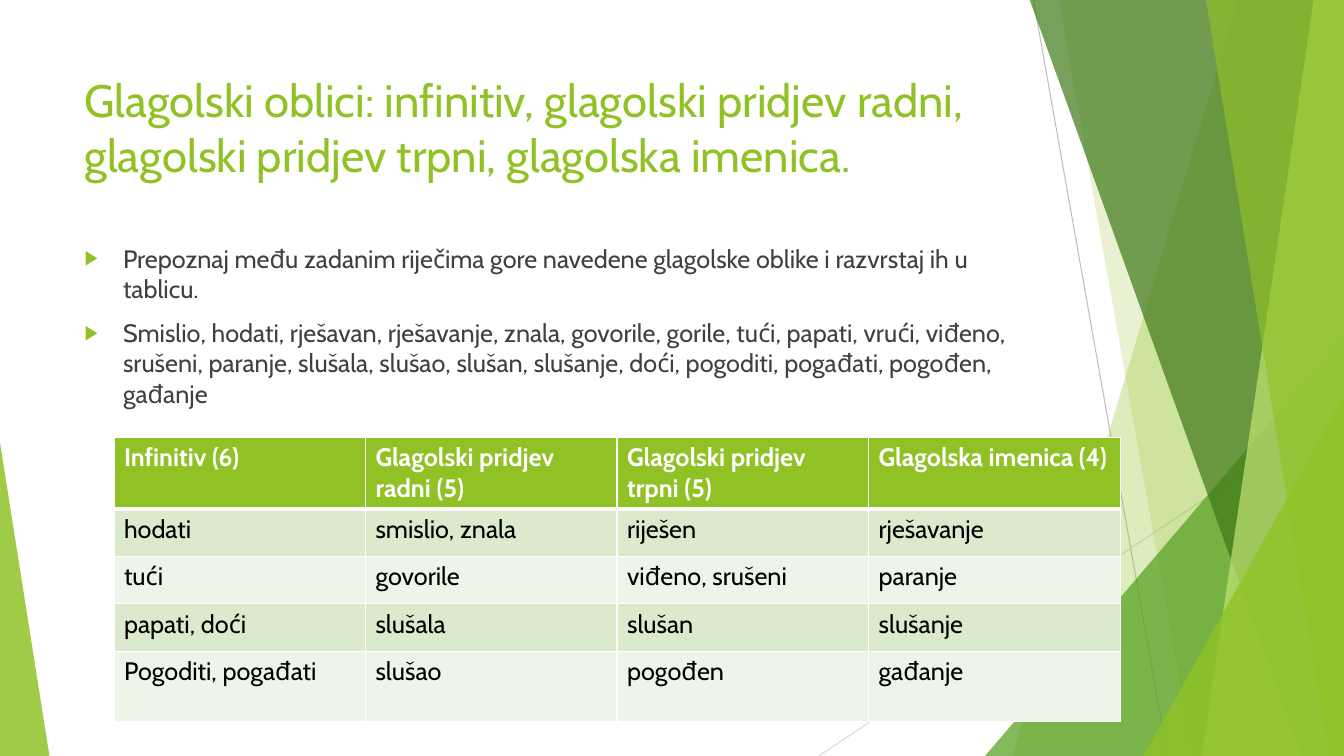
"""Build a Croatian grammar slide that sorts verb forms into a table."""
from lxml import etree
from pptx import Presentation
from pptx import util as u
from pptx.dml.color import RGBColor
from pptx.enum import shapes, text
from pptx.oxml import ns

GREEN = RGBColor(0x90, 0xC2, 0x26)
MID_GREEN = RGBColor(0x54, 0xA0, 0x21)
DARK_GREEN = RGBColor(0x3F, 0x78, 0x19)
LIME = RGBColor(0xC0, 0xE4, 0x74)
BAND_DARK = RGBColor(0xDB, 0xE9, 0xCD)
BAND_LIGHT = RGBColor(0xEE, 0xF4, 0xE8)
BODY_GREY = RGBColor(0x40, 0x40, 0x40)
LINE_GREY = RGBColor(0xBF, 0xBF, 0xBF)
PALE_GREY = RGBColor(0xD9, 0xD9, 0xD9)
WHITE = RGBColor(0xFF, 0xFF, 0xFF)
BLACK = RGBColor(0x00, 0x00, 0x00)

WIDTH, HEIGHT, TOP = 13.33, 7.5, -0.01

TITLE = ("Glagolski oblici: infinitiv, glagolski pridjev radni, "
         "glagolski pridjev trpni, glagolska imenica.")
TASKS = [
    "Prepoznaj među zadanim riječima gore navedene glagolske oblike i razvrstaj ih u tablicu.",
    "Smislio, hodati, rješavan, rješavanje, znala, govorile, gorile, tući, papati, vrući, "
    "viđeno, srušeni, paranje, slušala, slušao, slušan, slušanje, doći, pogoditi, pogađati, "
    "pogođen, gađanje",
]
VERB_FORMS = [
    ["Infinitiv (6)", "Glagolski pridjev radni (5)", "Glagolski pridjev trpni (5)",
     "Glagolska imenica (4)"],
    ["hodati", "smislio, znala", "riješen", "rješavanje"],
    ["tući", "govorile", "viđeno, srušeni", "paranje"],
    ["papati, doći", "slušala", "slušan", "slušanje"],
    ["Pogoditi, pogađati", "slušao", "pogođen", "gađanje"],
]
ROW_HEIGHTS = [0.71, 0.47, 0.47, 0.47, 0.7]


def add_xml(parent, tag, **attrs):
    return etree.SubElement(parent, ns.qn(tag), {k: str(v) for k, v in attrs.items()})


class Deck:
    def __init__(self, font):
        self.font = font
        self.prs = Presentation()
        self.prs.slide_width = u.Inches(WIDTH)
        self.prs.slide_height = u.Inches(HEIGHT)
        self.s = self.prs.slides.add_slide(self.prs.slide_layouts[1])

    def style(self, p, size, color, bold=False):
        p.alignment = text.PP_ALIGN.LEFT
        p.font.name = self.font
        p.font.size = u.Pt(size)
        p.font.bold = bold
        p.font.color.rgb = color

    def paint(self, sp, color, opacity):
        sp.shadow.inherit = False
        sp.line.fill.background()
        sp.fill.solid()
        sp.fill.fore_color.rgb = color
        clr = sp.fill._xPr.find(".//" + ns.qn("a:srgbClr"))
        add_xml(clr, "a:alpha", val=opacity * 1000)

    def line(self, x1, y1, x2, y2, color):
        c = self.s.shapes.add_connector(
            shapes.MSO_CONNECTOR.STRAIGHT, *map(u.Inches, (x1, y1, x2, y2)))
        c.line.color.rgb = color
        c.line.width = u.Pt(0.75)
        add_xml(c._element.spPr, "a:effectLst")

    def shard(self, top_x, bottom_x, color, opacity):
        corners = [(WIDTH, TOP), (WIDTH, HEIGHT), (bottom_x, HEIGHT)]
        fb = self.s.shapes.build_freeform(u.Inches(top_x), u.Inches(TOP))
        fb.add_line_segments([(u.Inches(x), u.Inches(y)) for x, y in corners])
        self.paint(fb.convert_to_shape(), color, opacity)

    def triangle(self, x, y, w, apex, color, opacity):
        sp = self.s.shapes.add_shape(
            shapes.MSO_SHAPE.ISOSCELES_TRIANGLE, *map(u.Inches, (x, y, w, HEIGHT - y)))
        sp.adjustments[0] = apex
        self.paint(sp, color, opacity)

    def placeholder(self, idx, x, y, w, h):
        sp = self.s.placeholders[idx]
        sp.left, sp.top, sp.width, sp.height = map(u.Inches, (x, y, w, h))
        self.s.shapes._spTree.append(sp._element)
        tf = sp.text_frame
        tf.word_wrap = True
        tf.auto_size = text.MSO_AUTO_SIZE.NONE
        tf.vertical_anchor = text.MSO_ANCHOR.TOP
        return tf

    def title(self, words, *box):
        tf = self.placeholder(0, *box)
        tf.text = words
        self.style(tf.paragraphs[0], 32.4, GREEN)

    def bullets(self, items, *box):
        tf = self.placeholder(1, *box)
        tf.text = "\n".join(items)
        for p in tf.paragraphs:
            p.space_before = u.Pt(10)
            pPr = p._p.get_or_add_pPr()
            pPr.set("marL", str(u.Inches(0.38)))
            pPr.set("indent", str(u.Inches(-0.38)))
            add_xml(add_xml(pPr, "a:buClr"), "a:srgbClr", val=GREEN)
            add_xml(pPr, "a:buSzPct", val=80000)
            add_xml(pPr, "a:buChar", char="▶")
            self.style(p, 18, BODY_GREY)

    def borders(self, cell, top, bottom):
        tcPr = cell._tc.get_or_add_tcPr()
        for side, width in (("L", 1), ("R", 1), ("T", top), ("B", bottom)):
            ln = add_xml(tcPr, "a:ln" + side, w=u.Pt(width))
            add_xml(add_xml(ln, "a:solidFill"), "a:srgbClr", val=WHITE)

    def table(self, rows, heights, x, y, w):
        frame = self.s.shapes.add_table(
            len(rows), len(rows[0]), *map(u.Inches, (x, y, w, sum(heights))))
        tbl = frame.table
        for row, height in zip(tbl.rows, heights):
            row.height = u.Inches(height)
        for i, row in enumerate(rows):
            header = i == 0
            fill = GREEN if header else BAND_DARK if i % 2 else BAND_LIGHT
            for j, words in enumerate(row):
                cell = tbl.cell(i, j)
                cell.text = words
                self.borders(cell, 3 if i == 1 else 1, 3 if header else 1)
                cell.fill.solid()
                cell.fill.fore_color.rgb = fill
                self.style(cell.text_frame.paragraphs[0], 18,
                           WHITE if header else BLACK, header)


def main():
    d = Deck("Cabin")
    d.line(10.25, 0, 11.58, HEIGHT, LINE_GREY)
    d.line(WIDTH, 4.03, 8.12, HEIGHT, PALE_GREY)
    d.shard(12.28, 10.04, GREEN, 30)
    d.shard(10.5, 11.83, GREEN, 20)
    d.triangle(9.77, 3.33, 3.56, 1, MID_GREEN, 72)
    d.shard(10.21, 12.91, DARK_GREEN, 70)
    d.shard(13.03, 11.92, LIME, 70)
    d.shard(11.96, 13.18, GREEN, 65)
    d.triangle(11.34, 3.93, 1.99, 1, GREEN, 80)
    d.triangle(0, 4.39, 0.49, 0, GREEN, 85)
    d.title(TITLE, 0.74, 0.67, 9.4, 1.44)
    d.bullets(TASKS, 0.74, 2.36, 9.4, 4.24)
    d.table(VERB_FORMS, ROW_HEIGHTS, 1.13, 4.34, 9.98)
    d.prs.save("out.pptx")


if __name__ == "__main__":
    main()
